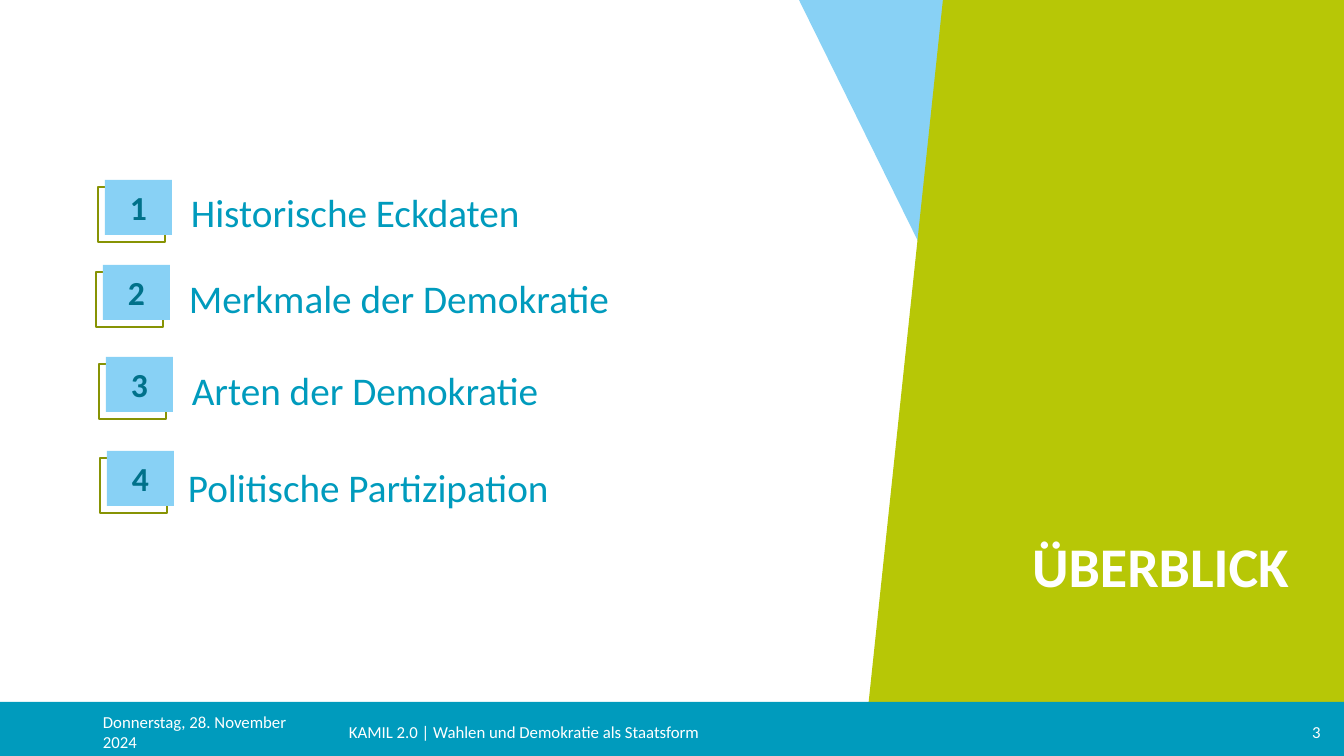
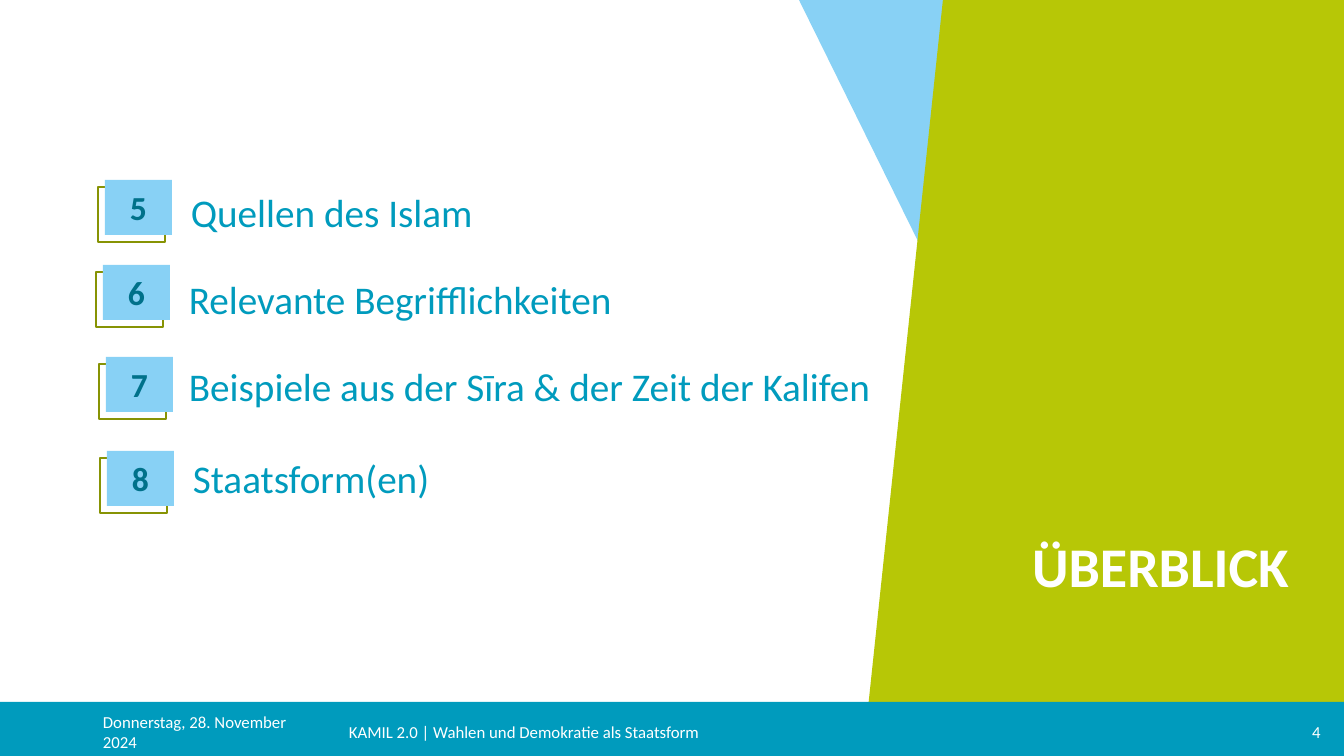
from pptx import Presentation
from pptx.dml.color import RGBColor
from pptx.enum.shapes import MSO_SHAPE
from pptx.enum.text import MSO_ANCHOR, PP_ALIGN
from pptx.util import Pt

WIDTH, HEIGHT = 1344, 756
PX = 12192000 / WIDTH
FONT = "Calibri"
LIME, SKY, TEAL = "B7C706", "88D1F5", "009BBD"
OLIVE, PETROL, WHITE = "879304", "00718A", "FFFFFF"

BAND_TOP = 702
FOOTER_TOP, FOOTER_HEIGHT = 712, 40
BADGE_WIDTH, BADGE_HEIGHT, FRAME_SHIFT = 67, 55, 7
LABEL_WIDTH, LABEL_HEIGHT = 754, 57
BADGES = [(105, 180), (103, 265), (106, 357), (107, 451)]

TITLE = "ÜBERBLICK"
DATE = "Donnerstag, 28. November 2024"
FOOTER = "KAMIL 2.0 | Wahlen und Demokratie als Staatsform"
FIRST_PAGE = 3
AGENDA = [
    [
        ("Historische Eckdaten", 181, 183),
        ("Merkmale der Demokratie", 179, 269),
        ("Arten der Demokratie", 182, 361),
        ("Politische Partizipation", 178, 458),
    ],
    [
        ("Quellen des Islam", 181, 183),
        ("Relevante Begrifflichkeiten", 179, 270),
        ("Beispiele aus der Sīra & der Zeit der Kalifen", 179, 357),
        ("Staatsform(en)", 183, 449),
    ],
]


def px(*values):
    """Turn px lengths into EMU."""
    return [round(v * PX) for v in values]


def color(value):
    """Turn a hex string into a colour."""
    return RGBColor.from_string(value)


def write(sp, text, size=12, ink=WHITE, bold=False, align=PP_ALIGN.LEFT,
          anchor=MSO_ANCHOR.MIDDLE, spacing=None):
    """Put one formatted paragraph into a shape."""
    tf = sp.text_frame
    tf.word_wrap = True
    tf.vertical_anchor = anchor
    p = tf.paragraphs[0]
    p.alignment = align
    p.line_spacing = spacing
    p.space_before = Pt(0)
    r = p.add_run()
    r.text = text
    r.font.name = FONT
    r.font.size = Pt(size)
    r.font.bold = bold
    r.font.color.rgb = color(ink)


def paint(sp, fill=None, line=None):
    """Give a shape a flat fill or a thin outline."""
    sp.shadow.inherit = False
    if fill:
        sp.fill.solid()
        sp.fill.fore_color.rgb = color(fill)
    else:
        sp.fill.background()
    if line:
        sp.line.color.rgb = color(line)
        sp.line.width = Pt(1)
    else:
        sp.line.fill.background()
    return sp


def add_block(s, x, y, w, h, fill=None, line=None, kind=MSO_SHAPE.RECTANGLE):
    """Add a painted preset shape."""
    return paint(s.shapes.add_shape(kind, *px(x, y, w, h)), fill, line)


def add_text(s, x, y, w, h, text, **style):
    """Add a text box."""
    write(s.shapes.add_textbox(*px(x, y, w, h)), text, **style)


def add_backdrop(s, layout):
    """Draw the shared shapes and hand them to the layout."""
    for ph in list(layout.placeholders):
        if ph.placeholder_format.idx:
            ph.element.getparent().remove(ph.element)
    triangle = add_block(s, 799, 0, 262, 531, SKY,
                         kind=MSO_SHAPE.RIGHT_TRIANGLE)
    triangle.rotation = 180
    outline = s.shapes.build_freeform(863, HEIGHT, scale=PX)
    outline.add_line_segments([(WIDTH, HEIGHT), (WIDTH, 0), (943, 0)])
    panel = paint(outline.convert_to_shape(), LIME)
    band = add_block(s, 0, BAND_TOP, WIDTH, HEIGHT - BAND_TOP, TEAL)
    for sp in (triangle, panel, band):
        layout.shapes.element.append(sp.element)


def add_title(s):
    """Move and format the title placeholder."""
    sp = s.shapes.title
    sp.left, sp.top, sp.width, sp.height = px(918, 531, 381, 77)
    write(sp, TITLE, size=40, bold=True, align=PP_ALIGN.RIGHT, spacing=0.9)


def add_footer(s, page):
    """Add date, footer text and page number."""
    for x, w, text, align in [
        (93, 238, DATE, PP_ALIGN.LEFT),
        (339, 913, FOOTER, PP_ALIGN.LEFT),
        (1289, 55, str(page), PP_ALIGN.CENTER),
    ]:
        add_text(s, x, FOOTER_TOP, w, FOOTER_HEIGHT, text, align=align)


def add_item(s, number, badge, item):
    """Add a numbered badge with its frame and label."""
    x, y = badge
    label, label_x, label_y = item
    add_block(s, x - FRAME_SHIFT, y + FRAME_SHIFT, BADGE_WIDTH, BADGE_HEIGHT,
              line=OLIVE)
    sp = add_block(s, x, y, BADGE_WIDTH, BADGE_HEIGHT, SKY)
    write(sp, str(number), size=24, ink=PETROL, bold=True,
          align=PP_ALIGN.CENTER)
    add_text(s, label_x, label_y, LABEL_WIDTH, LABEL_HEIGHT, label, size=28,
             ink=TEAL, anchor=MSO_ANCHOR.TOP)


def main():
    """Build and save the presentation."""
    prs = Presentation()
    prs.slide_width, prs.slide_height = px(WIDTH, HEIGHT)
    layout = prs.slide_layouts[5]
    number = 1
    for index, items in enumerate(AGENDA):
        s = prs.slides.add_slide(layout)
        if index == 0:
            add_backdrop(s, layout)
        add_title(s)
        add_footer(s, FIRST_PAGE + index)
        for badge, item in zip(BADGES, items):
            add_item(s, number, badge, item)
            number += 1
    prs.save("out.pptx")


if __name__ == "__main__":
    main()
